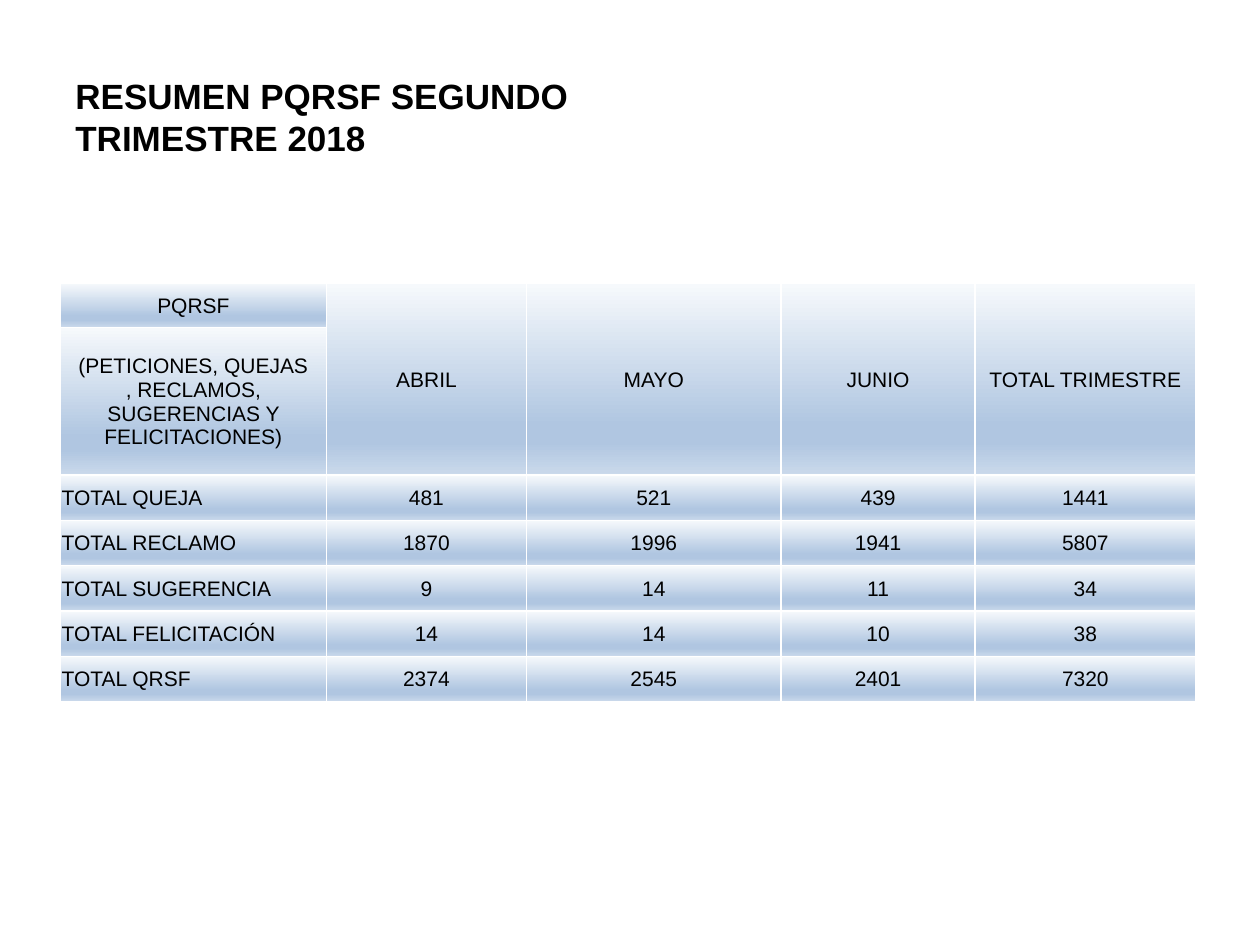
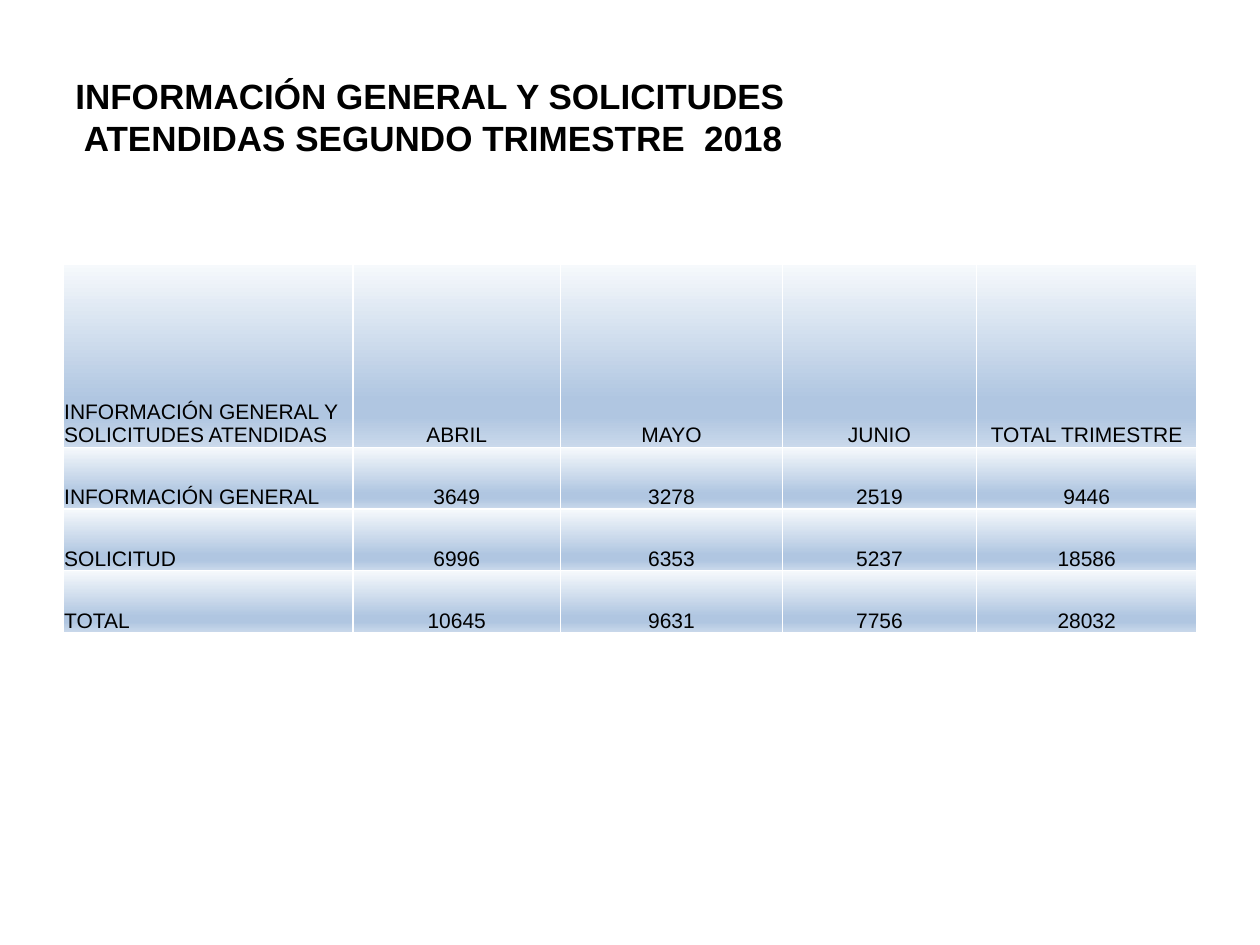
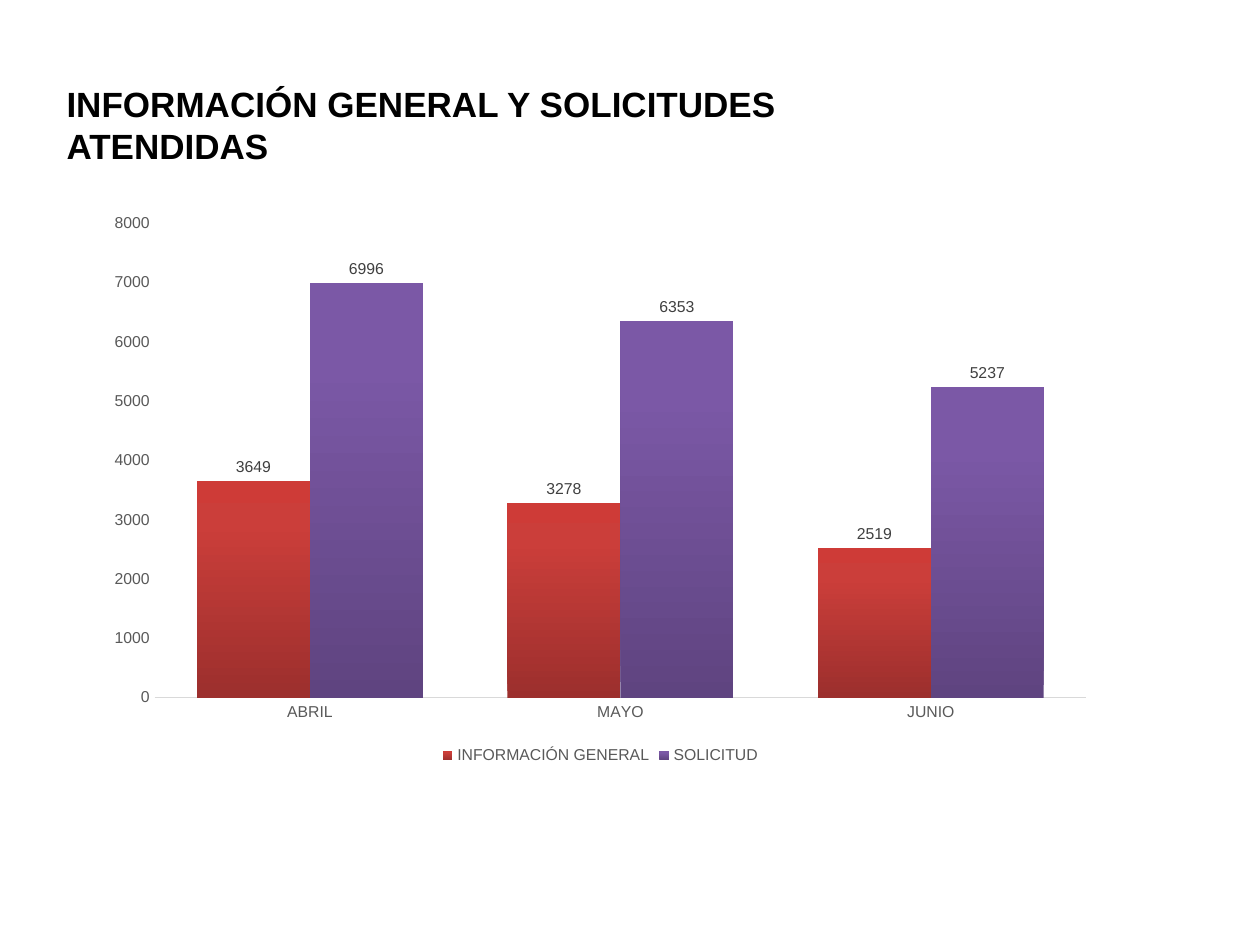
from dataclasses import dataclass

from lxml.etree import SubElement
from pptx import Presentation
from pptx.chart.data import CategoryChartData
from pptx.dml.color import RGBColor
from pptx.enum.chart import XL_CHART_TYPE, XL_LABEL_POSITION, XL_LEGEND_POSITION, XL_TICK_MARK
from pptx.enum.text import MSO_ANCHOR, PP_ALIGN
from pptx.oxml import parse_xml
from pptx.oxml.ns import nsdecls, qn
from pptx.util import Emu, Inches, Pt

SLIDE_WIDTH, SLIDE_HEIGHT = Inches(10), Inches(7.5)
GRID_COLUMNS, GRID_ROWS = 100, 75


@dataclass(frozen=True)
class Gradient:
    """Colour stops as (percent, colour), with a counter-clockwise angle."""

    stops: tuple[tuple[int, str], ...]
    angle: int


@dataclass(frozen=True)
class Theme:
    """Colours and type sizes of the whole report."""

    font: str = "Arial"
    title_size: int = 20
    table_size: int = 12
    chart_size: int = 10
    chart_detail_size: int = 9
    ink: str = "000000"
    axis_text: str = "595959"
    label_text: str = "404040"
    axis_line: str = "D9D9D9"
    border: str = "FFFFFF"
    cell: Gradient = Gradient(((0, "F6F9FC"), (74, "B0C6E1"), (83, "B0C6E1"), (100, "CAD9EB")), 270)
    bars: tuple[Gradient, ...] = (
        Gradient(((0, "9C2F2D"), (80, "CB3E3A"), (100, "CE3B37")), 90),
        Gradient(((0, "5F4480"), (80, "7B58A6"), (100, "7C57A8")), 90),
    )


@dataclass(frozen=True)
class Area:
    """A rectangle in grid columns and rows."""

    column: float
    row: float
    columns: float
    rows: float

    def box(self) -> tuple[Emu, Emu, Emu, Emu]:
        """Return left, top, width and height on the slide."""
        return across(self.column), down(self.row), across(self.columns), down(self.rows)


@dataclass(frozen=True)
class Summary:
    """A quarterly table: its text, grid tracks and alignment."""

    column: float
    row: float
    widths: tuple[float, ...]
    heights: tuple[float, ...]
    lines: list[list[str]]
    anchor: MSO_ANCHOR
    centred_labels: int = 0
    heading_rows: int = 1


THEME = Theme()
TITLE_AREA = Area(5, 3, 90, 12.5)
MONTHS = ["ABRIL", "MAYO", "JUNIO"]
HEADINGS = [*MONTHS, "TOTAL TRIMESTRE"]
COMPLAINTS = {
    "TOTAL QUEJA": [481, 521, 439],
    "TOTAL RECLAMO": [1870, 1996, 1941],
    "TOTAL SUGERENCIA": [9, 14, 11],
    "TOTAL FELICITACIÓN": [14, 14, 10],
}
REQUESTS = {
    "INFORMACIÓN GENERAL": [3649, 3278, 2519],
    "SOLICITUD": [6996, 6353, 5237],
}


def across(columns: float) -> Emu:
    """Convert grid columns to a length."""
    return Emu(round(SLIDE_WIDTH * columns / GRID_COLUMNS))


def down(rows: float) -> Emu:
    """Convert grid rows to a length."""
    return Emu(round(SLIDE_HEIGHT * rows / GRID_ROWS))


def style_font(font, size: int, color: str, bold: bool = False) -> None:
    """Apply the report typeface with a size and colour."""
    font.name, font.size, font.bold = THEME.font, Pt(size), bold
    font.color.rgb = RGBColor.from_string(color)


def fill_gradient(fill, owner, gradient: Gradient) -> None:
    """Fill the owner element with the stops of a gradient."""
    fill.gradient()
    fill.gradient_angle = gradient.angle
    stop_list = owner.find(".//" + qn("a:gsLst"))
    stop_list[:] = []
    for percent, color in gradient.stops:
        stop = SubElement(stop_list, qn("a:gs"), pos=str(percent * 1000))
        SubElement(stop, qn("a:srgbClr"), val=color)


def with_totals(counts: dict[str, list[int]], total_label: str) -> list[list[str]]:
    """Return text rows with quarter totals and a closing total row."""
    monthly = [sum(month) for month in zip(*counts.values())]
    return [
        [label, *map(str, values), str(sum(values))]
        for label, values in {**counts, total_label: monthly}.items()
    ]


def add_title(slide, text: str, area: Area = TITLE_AREA) -> None:
    """Write the slide title."""
    frame = slide.shapes.add_textbox(*area.box()).text_frame
    frame.word_wrap = True
    frame.vertical_anchor = MSO_ANCHOR.MIDDLE
    heading = frame.paragraphs[0]
    heading.text = text
    style_font(heading.font, THEME.title_size, THEME.ink, bold=True)
    for run in heading.runs:
        style_font(run.font, THEME.title_size, THEME.ink, bold=True)


def style_cell(cell, text: str, anchor: MSO_ANCHOR, alignment: PP_ALIGN) -> None:
    """Write one cell and give it its gradient and borders."""
    cell.margin_left = cell.margin_right = cell.margin_top = Inches(0.01)
    cell.margin_bottom = 0
    cell.vertical_anchor = anchor
    entry = cell.text_frame.paragraphs[0]
    entry.text = text
    entry.alignment = alignment
    for run in entry.runs:
        style_font(run.font, THEME.table_size, THEME.ink)
    properties = cell._tc.get_or_add_tcPr()
    fill_gradient(cell.fill, properties, THEME.cell)
    for position, side in enumerate(("lnL", "lnR", "lnT", "lnB")):
        properties.insert(position, parse_xml(
            f'<a:{side} {nsdecls("a")} w="{Pt(1)}"><a:solidFill>'
            f'<a:srgbClr val="{THEME.border}"/></a:solidFill></a:{side}>'
        ))


def add_summary(slide, summary: Summary) -> None:
    """Draw a quarterly table."""
    area = Area(summary.column, summary.row, sum(summary.widths), sum(summary.heights))
    table = slide.shapes.add_table(len(summary.heights), len(summary.widths), *area.box()).table
    table.first_row = table.horz_banding = False
    for column, width in zip(table.columns, summary.widths):
        column.width = across(width)
    for row, height in zip(table.rows, summary.heights):
        row.height = down(height)
    for row_index, line in enumerate(summary.lines):
        for column_index, text in enumerate(line):
            is_label = column_index == 0 and row_index >= summary.centred_labels
            alignment = PP_ALIGN.LEFT if is_label else PP_ALIGN.CENTER
            style_cell(table.cell(row_index, column_index), text, summary.anchor, alignment)
    if summary.heading_rows > 1:
        for column_index in range(1, len(summary.widths)):
            table.cell(0, column_index).merge(table.cell(summary.heading_rows - 1, column_index))


def add_requests_chart(slide, area: Area) -> None:
    """Draw the monthly requests as clustered columns."""
    data = CategoryChartData()
    data.categories = MONTHS
    for name, values in REQUESTS.items():
        data.add_series(name, values)
    chart = slide.shapes.add_chart(XL_CHART_TYPE.COLUMN_CLUSTERED, *area.box(), data).chart
    style_font(chart.font, THEME.chart_size, THEME.ink)
    chart.has_title = False
    chart.has_legend = True
    chart.legend.position = XL_LEGEND_POSITION.BOTTOM
    chart.legend.include_in_layout = False
    style_font(chart.legend.font, THEME.chart_detail_size, THEME.axis_text)

    for axis in (chart.category_axis, chart.value_axis):
        axis.has_major_gridlines = False
        axis.major_tick_mark = axis.minor_tick_mark = XL_TICK_MARK.NONE
        style_font(axis.tick_labels.font, THEME.chart_detail_size, THEME.axis_text)
    baseline = chart.category_axis.format.line
    baseline.width = Pt(1)
    baseline.color.rgb = RGBColor.from_string(THEME.axis_line)
    chart.value_axis.format.line.fill.background()
    chart.value_axis.minimum_scale, chart.value_axis.maximum_scale = 0, 8000
    chart.value_axis.major_unit = 1000

    plot = chart.plots[0]
    plot.gap_width, plot.overlap, plot.vary_by_categories = 75, 0, False
    for series, gradient in zip(plot.series, THEME.bars):
        fill_gradient(series.format.fill, series._element, gradient)
        labels = series.data_labels
        labels.show_value = True
        labels.position = XL_LABEL_POSITION.OUTSIDE_END
        style_font(labels.font, THEME.chart_detail_size, THEME.label_text)


def main() -> None:
    """Build the three slides and save them."""
    presentation = Presentation()
    presentation.slide_width, presentation.slide_height = SLIDE_WIDTH, SLIDE_HEIGHT
    blank = presentation.slide_layouts[6]
    complaints, requests, monthly = (presentation.slides.add_slide(blank) for _ in range(3))

    add_title(complaints, "RESUMEN PQRSF SEGUNDO \nTRIMESTRE 2018")
    scope = "(PETICIONES, QUEJAS\n, RECLAMOS, SUGERENCIAS Y FELICITACIONES)"
    add_summary(complaints, Summary(
        4.8, 22.5, (21.1, 15.9, 20.2, 15.4, 17.5), (3.5, 11.7, *[3.6] * 5),
        [["PQRSF", *HEADINGS], [scope, *[""] * 4], *with_totals(COMPLAINTS, "TOTAL QRSF")],
        MSO_ANCHOR.MIDDLE, centred_labels=2, heading_rows=2,
    ))

    add_title(requests, "INFORMACIÓN GENERAL Y SOLICITUDES\n ATENDIDAS SEGUNDO TRIMESTRE  2018")
    add_summary(requests, Summary(
        5, 21, (23, 16.5, 17.6, 15.4, 17.5), (14.5, *[4.9] * 3),
        [["INFORMACIÓN GENERAL Y SOLICITUDES ATENDIDAS", *HEADINGS], *with_totals(REQUESTS, "TOTAL")],
        MSO_ANCHOR.BOTTOM,
    ))

    add_title(monthly, "INFORMACIÓN GENERAL Y SOLICITUDES ATENDIDAS", Area(4.3, 3.6, 63, 12.5))
    add_requests_chart(monthly, Area(7.5, 16.1, 80.3, 45))
    presentation.save("out.pptx")


if __name__ == "__main__":
    main()
